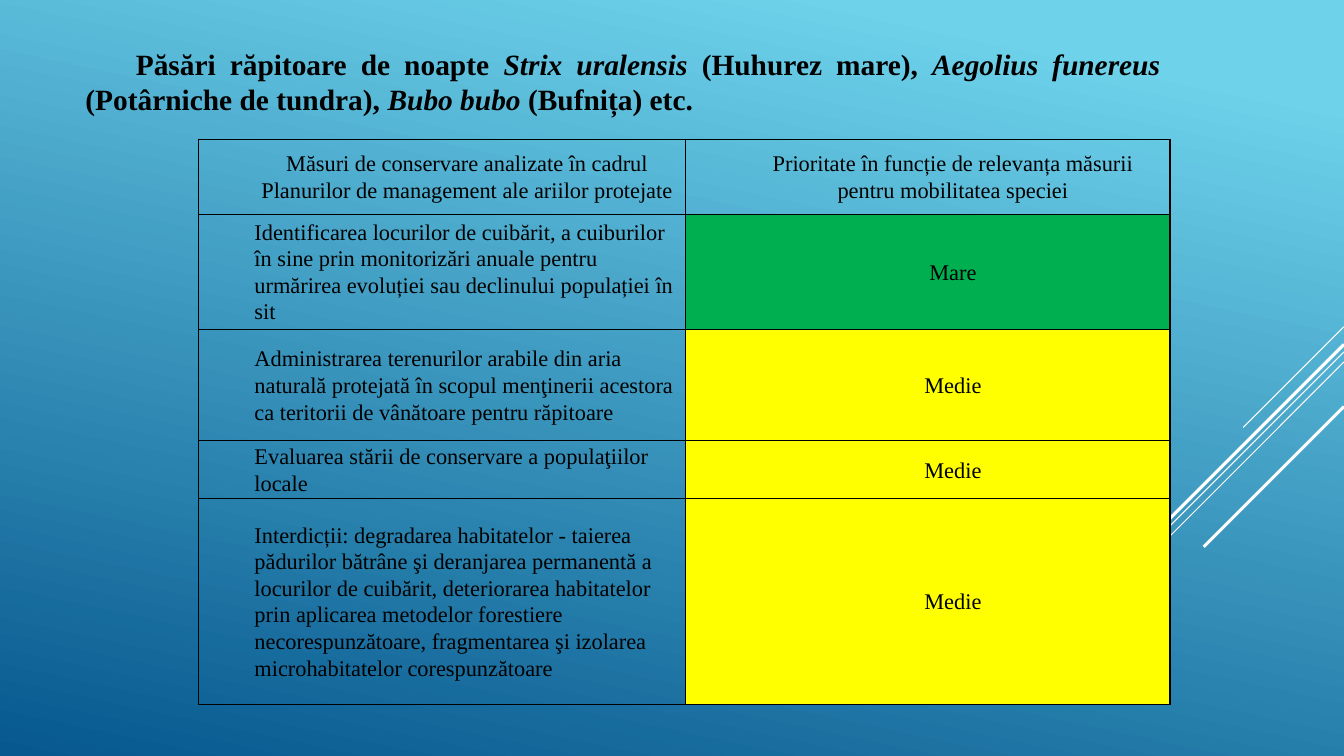
import pptx
import pptx.util
import pptx.dml.color
import pptx.enum.shapes
import pptx.enum.text
import pptx.oxml
import pptx.oxml.ns

Pt = pptx.util.Pt
RGBColor = pptx.dml.color.RGBColor
ALIGN = pptx.enum.text.PP_ALIGN
ANCHOR = pptx.enum.text.MSO_ANCHOR

BLACK = RGBColor(0x00, 0x00, 0x00)
WHITE = RGBColor(0xFF, 0xFF, 0xFF)
GREEN = RGBColor(0x00, 0xB0, 0x50)
YELLOW = RGBColor(0xFF, 0xFF, 0x00)
SKY = RGBColor(0x6E, 0xD2, 0xEB)
DEEP_BLUE = RGBColor(0x06, 0x58, 0x8E)
FONT = "Times New Roman"

# The slide is a grid of 16 columns by 9 rows of square units
COLUMNS, ROWS = 16, 9
UNIT = pptx.util.Inches(7.5) / ROWS
INDENT = 0.6

# Diagonals from the right edge: start row, run in columns, width in points
DIAGONALS = [
    (3.89, 1.2, 0.75),
    (4.19, 3.91, 0.75),
    (4.31, 2.49, 0.75),
    (4.1, 2.3, 2.25),
    (4.84, 1.67, 2.25),
]

# Title spans: text, italic
TITLE = [
    ("Păsări răpitoare de noapte ", False),
    ("Strix uralensis ", True),
    ("(Huhurez mare), ", False),
    ("Aegolius funereus ", True),
    ("(Potârniche de tundra), ", False),
    ("Bubo bubo ", True),
    ("(Bufnița) etc.", False),
]

HEADINGS = (
    "Măsuri de conservare analizate în cadrul Planurilor de management ale ariilor protejate",
    "Prioritate în funcție de relevanța măsurii pentru mobilitatea speciei",
)
# Measures: row height, measure, priority
MEASURES = [
    (1.27, "Identificarea locurilor de cuibărit, a cuiburilor în sine prin monitorizări "
           "anuale pentru urmărirea evoluției sau declinului populației în sit", "Mare"),
    (1.33, "Administrarea terenurilor arabile din aria naturală protejată în scopul "
           "menţinerii acestora ca teritorii de vânătoare pentru răpitoare", "Medie"),
    (0.64, "Evaluarea stării de conservare a populaţiilor locale", "Medie"),
    (2.45, "Interdicții: degradarea habitatelor - taierea pădurilor bătrâne şi deranjarea "
           "permanentă a locurilor de cuibărit, deteriorarea habitatelor prin aplicarea "
           "metodelor forestiere necorespunzătoare, fragmentarea şi izolarea "
           "microhabitatelor corespunzătoare", "Medie"),
]
PRIORITY_FILL = {"Mare": GREEN, "Medie": YELLOW}
HEADING_HEIGHT = 0.89
COLUMN_WIDTHS = (5.8, 5.77)


def grid(units):
    return pptx.util.Emu(round(units * UNIT))


def style_span(span, size, bold=False, italic=False):
    span.font.name = FONT
    span.font.size = Pt(size)
    span.font.bold = bold
    span.font.italic = italic
    span.font.color.rgb = BLACK


def paint_background(page):
    fill = page.background.fill
    fill.gradient()
    fill.gradient_angle = 258
    for stop, position, colour in zip(fill.gradient_stops, (0.1, 1), (SKY, DEEP_BLUE)):
        stop.position = position
        stop.color.rgb = colour


def add_diagonal(page, row, run, width):
    line = page.shapes.add_connector(
        pptx.enum.shapes.MSO_CONNECTOR.STRAIGHT,
        grid(COLUMNS), grid(row), grid(COLUMNS - run), grid(row + run))
    line.line.color.rgb = WHITE
    line.line.width = Pt(width)
    line._element.spPr.append(pptx.oxml.parse_xml(
        f"<a:effectLst {pptx.oxml.ns.nsdecls('a')}/>"))


def add_title(page):
    box = page.shapes.add_textbox(grid(0.9), grid(0.49), grid(13.03), grid(7.68))
    box.text_frame.word_wrap = True
    para = box.text_frame.paragraphs[0]
    para.alignment = ALIGN.JUSTIFY
    para.space_after = Pt(6)
    para._p.get_or_add_pPr().set("indent", str(grid(INDENT)))
    for text, italic in TITLE:
        span = para.add_run()
        span.text = text
        style_span(span, 21, bold=True, italic=italic)


def add_borders(cell):
    properties = cell._tc.get_or_add_tcPr()
    for index, side in enumerate(("lnL", "lnR", "lnT", "lnB")):
        properties.insert(index, pptx.oxml.parse_xml(
            f"<a:{side} {pptx.oxml.ns.nsdecls('a')} w='{Pt(1)}'>"
            f"<a:solidFill><a:srgbClr val='{BLACK}'/></a:solidFill></a:{side}>"))


def fill_cell(cell, text, alignment, colour=None):
    cell.text_frame.text = text
    cell.vertical_anchor = ANCHOR.MIDDLE
    cell.margin_left = cell.margin_right = grid(0.07)
    cell.margin_top = cell.margin_bottom = 0
    para = cell.text_frame.paragraphs[0]
    para.alignment = alignment
    para.line_spacing = 1.07
    para._p.get_or_add_pPr().set("marL", str(grid(INDENT)))
    style_span(para.runs[0], 16)
    if colour is None:
        cell.fill.background()
    else:
        cell.fill.solid()
        cell.fill.fore_color.rgb = colour
    add_borders(cell)


def add_measures_table(page):
    heights = [HEADING_HEIGHT] + [height for height, _, _ in MEASURES]
    table = page.shapes.add_table(
        len(heights), len(COLUMN_WIDTHS), grid(2.36), grid(1.66),
        grid(sum(COLUMN_WIDTHS)), grid(sum(heights))).table
    table.first_row = table.horz_banding = False
    for column, width in zip(table.columns, COLUMN_WIDTHS):
        column.width = grid(width)
    for row, height in zip(table.rows, heights):
        row.height = grid(height)
    for index, heading in enumerate(HEADINGS):
        fill_cell(table.cell(0, index), heading, ALIGN.CENTER)
    for index, (_, measure, priority) in enumerate(MEASURES, start=1):
        fill_cell(table.cell(index, 0), measure, ALIGN.LEFT)
        fill_cell(table.cell(index, 1), priority, ALIGN.CENTER, PRIORITY_FILL[priority])


def main():
    deck = pptx.Presentation()
    deck.slide_width, deck.slide_height = grid(COLUMNS), grid(ROWS)
    page = deck.slides.add_slide(deck.slide_layouts[6])
    paint_background(page)
    for row, run, width in DIAGONALS:
        add_diagonal(page, row, run, width)
    add_title(page)
    add_measures_table(page)
    deck.save("out.pptx")


if __name__ == "__main__":
    main()
